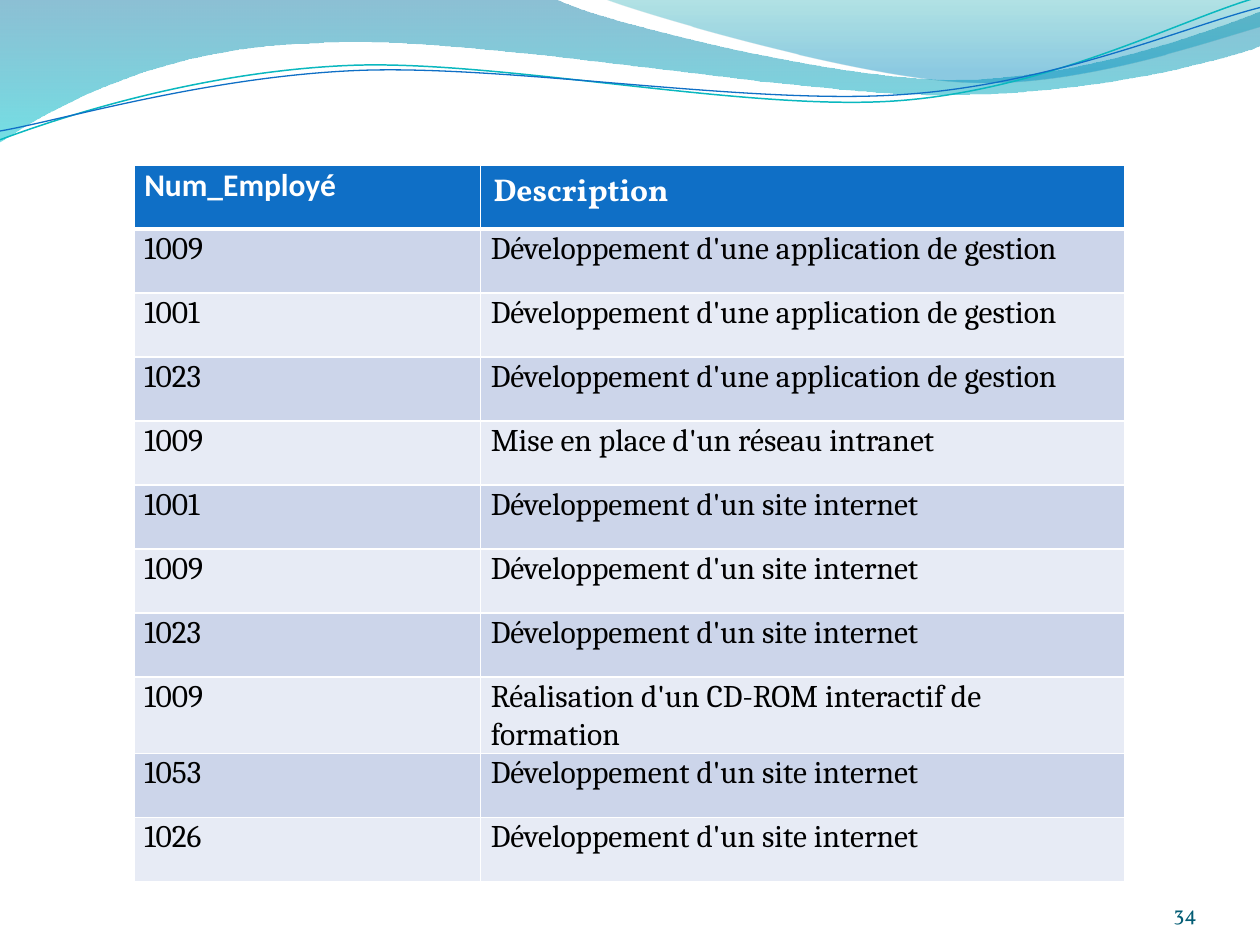
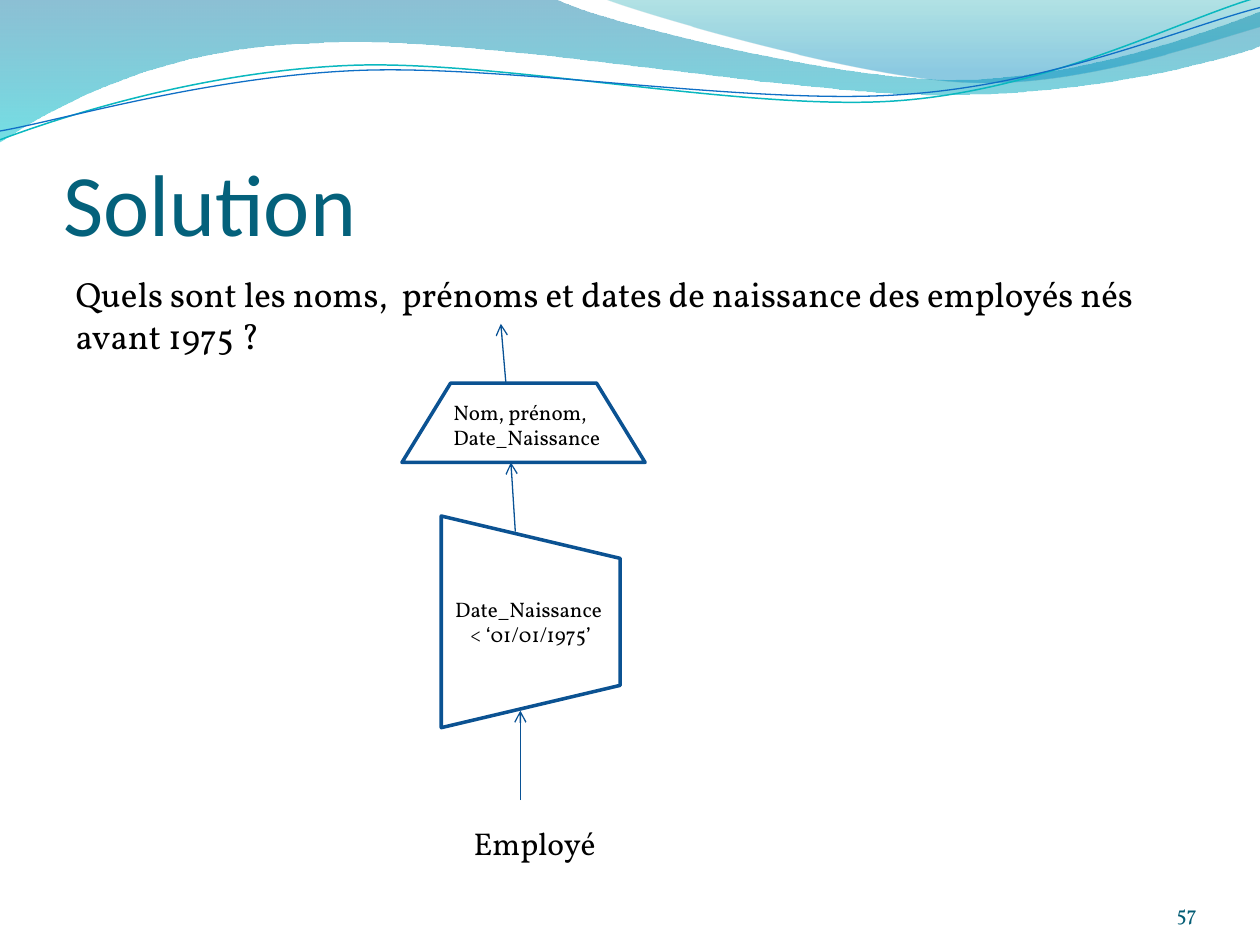
import dataclasses

import lxml.etree
import pptx
import pptx.dml.color
import pptx.enum.shapes
import pptx.enum.text
import pptx.oxml.ns
import pptx.util

COLUMNS, ROWS = 100, 75
WIDTH, HEIGHT = pptx.util.Inches(10), pptx.util.Inches(7.5)
ALIGN = pptx.enum.text.PP_ALIGN
ANCHOR = pptx.enum.text.MSO_ANCHOR
qn = pptx.oxml.ns.qn


@dataclasses.dataclass(frozen=True)
class Theme:
    heading_font: str = "Calibri"
    body_font: str = "Vollkorn"
    table_font: str = "Cambria"
    title: str = "04617B"
    number: str = "045D75"
    text: str = "000000"
    white: str = "FFFFFF"
    accent: str = "0F6FC6"
    teal: str = "0AB8BF"
    arrow: str = "095295"
    outline: str = "0B5292"
    bands: tuple = ("CCD5EA", "E7EBF5")
    title_size: int = 50
    question_size: int = 20
    text_size: int = 18
    small_size: int = 12


THEME = Theme()

# Curves: a start point, then cubic segments (two controls and an end), in grid cells.
UPPER_EDGE = [(44, -0.1), (47.6, 1.7), (66.4, 6.3), (75.8, 6.3),
              (85.3, 6.3), (95.8, 2.6), (100, 0.9)]
LOWER_EDGE = [(100.1, 3.6), (98.3, 4.4), (87, 7.6), (74.6, 7.5),
              (62.2, 7.5), (38.2, 2.8), (25.7, 3.4),
              (12.9, 3.6), (4.6, 8.3), (-0.1, 11.3)]
RIGHT_EDGE = [(47.9, -0.1), (50.9, 1.1), (68.2, 6.2), (76.9, 6.5),
              (85.6, 6.9), (96.1, 3.2), (100, 2.1)]
TEAL_LINE = [(0, 11.1), (4.8, 9.3), (15.8, 5.7), (27.7, 5.2),
             (39.5, 4.7), (59.3, 8.9), (71.3, 8),
             (83.3, 7.1), (93.8, 1.5), (99.8, -0.2)]
BLUE_LINE = [(0, 10.4), (4.7, 9.6), (16.4, 6.1), (28.3, 5.6),
             (40.3, 5.1), (59.7, 8.4), (71.7, 7.5),
             (83.6, 6.7), (94.1, 2.1), (100, 0.6)]

PROJECTS = [
    ("1009", "Développement d'une application de gestion"),
    ("1001", "Développement d'une application de gestion"),
    ("1023", "Développement d'une application de gestion"),
    ("1009", "Mise en place d'un réseau intranet"),
    ("1001", "Développement d'un site internet"),
    ("1009", "Développement d'un site internet"),
    ("1023", "Développement d'un site internet"),
    ("1009", "Réalisation d'un CD-ROM interactif de formation"),
    ("1053", "Développement d'un site internet"),
    ("1026", "Développement d'un site internet"),
]


def rgb(value):
    return pptx.dml.color.RGBColor.from_string(value)


def across(columns):
    return round(WIDTH * columns / COLUMNS)


def down(rows):
    return round(HEIGHT * rows / ROWS)


def area(left, top, width, height):
    return across(left), down(top), across(width), down(height)


def add_outline(page, curves, close):
    """Join curves by straight lines; a curve of one point is a corner."""
    corners = [(across(x), down(y)) for curve in curves for x, y in curve]
    builder = page.shapes.build_freeform(*corners[0])
    builder.add_line_segments(corners[1:], close=close)
    shape = builder.convert_to_shape()
    shape.shadow.inherit = False
    segments = iter(list(shape.element.spPr.iter(qn("a:lnTo"))))
    for order, curve in enumerate(curves):
        if order:
            next(segments)
        for _ in range(len(curve) // 3):
            bend_segments([next(segments) for _ in range(3)])
    return shape


def bend_segments(lines):
    """Turn three straight segments into one cubic curve."""
    bend = lxml.etree.Element(qn("a:cubicBezTo"))
    lines[0].addprevious(bend)
    for line in lines:
        bend.append(line[0])
        line.getparent().remove(line)


def add_wave(page, curves, stops):
    """Add a band with a vertical gradient; a stop is position, colour, opacity."""
    wave = add_outline(page, curves, True)
    wave.line.fill.background()
    wave.fill.gradient()
    wave.fill.gradient_angle = 270
    for stop, (position, color, opacity) in zip(wave.fill.gradient_stops, stops):
        stop.position = position
        stop.color.rgb = rgb(color)
    for color, (_, _, opacity) in zip(wave.element.spPr.iter(qn("a:srgbClr")), stops):
        lxml.etree.SubElement(color, qn("a:alpha"), val=str(opacity * 1000))
    return wave


def add_ripple(page, curve, color, width):
    ripple = add_outline(page, [curve], False)
    ripple.fill.background()
    ripple.line.color.rgb = rgb(color)
    ripple.line.width = pptx.util.Pt(width)
    return ripple


def move_waves_to_master(deck, page):
    """Build the header waves on a page, then hand them to the master."""
    waves = [
        add_wave(page, [[(0, 0)], UPPER_EDGE, LOWER_EDGE],
                 [(0, "0074A1", 45), (1, "00C6CF", 55)]),
        add_wave(page, [RIGHT_EDGE, [(100, 0)]],
                 [(0, "00A1A9", 30), (0.8, "008BBF", 45)]),
        add_ripple(page, TEAL_LINE, THEME.teal, 0.85),
        add_ripple(page, BLUE_LINE, THEME.accent, 0.75),
    ]
    for order, wave in enumerate(waves):
        wave.element.nvSpPr.cNvPr.set("id", str(100 + order))
        deck.slide_master.shapes.element.append(wave.element)


def write(frame, lines, size, font=THEME.body_font, color=THEME.text,
          bold=False, align=ALIGN.LEFT, anchor=ANCHOR.TOP, insets=(0.1, 0.05, 0.1, 0.05)):
    """Fill a text frame with one paragraph; its lines are split by breaks."""
    frame.word_wrap = True
    frame.auto_size = pptx.enum.text.MSO_AUTO_SIZE.NONE
    frame.vertical_anchor = anchor
    (frame.margin_left, frame.margin_top,
     frame.margin_right, frame.margin_bottom) = map(pptx.util.Inches, insets)
    para = frame.paragraphs[0]
    para.alignment = align
    para.space_before = pptx.util.Pt(0)
    for order, line in enumerate(lines):
        if order:
            para.add_line_break()
        span = para.add_run()
        span.text = line
        style_span(span, size, font, color, bold)
    return para


def style_span(span, size, font, color, bold=False):
    span.font.size = pptx.util.Pt(size)
    span.font.name = font
    span.font.color.rgb = rgb(color)
    span.font.bold = bold


def add_label(page, place, lines, size, **style):
    box = page.shapes.add_textbox(*area(*place))
    write(box.text_frame, lines, size, **style)


def add_page_number(page, number):
    add_label(page, (86.7, 69.5, 8.3, 4), [number], THEME.small_size, color=THEME.number,
              align=ALIGN.RIGHT, anchor=ANCHOR.BOTTOM, insets=(0, 0, 0, 0))


def fill_placeholder(box, place, lines, size, **style):
    box.left, box.top, box.width, box.height = area(*place)
    return write(box.text_frame, lines, size, **style)


def remove_bullet(para):
    properties = para._p.get_or_add_pPr()
    properties.set("marL", "0")
    properties.set("indent", "0")
    lxml.etree.SubElement(properties, qn("a:buNone"))


def add_borders(cell, bottom):
    properties = cell._tc.get_or_add_tcPr()
    for side, width in (("L", 1), ("R", 1), ("T", 1), ("B", bottom)):
        line = lxml.etree.SubElement(properties, qn("a:ln" + side),
                                     w=str(pptx.util.Pt(width)))
        solid = lxml.etree.SubElement(line, qn("a:solidFill"))
        lxml.etree.SubElement(solid, qn("a:srgbClr"), val=THEME.white)


def fill_cell(cell, text, fill, tight=True, bottom=1, **style):
    """Format one cell; a tight cell has no top inset and looser lines."""
    add_borders(cell, bottom)
    cell.fill.solid()
    cell.fill.fore_color.rgb = rgb(fill)
    para = cell.text_frame.paragraphs[0]
    if tight:
        cell.margin_left = cell.margin_right = pptx.util.Inches(0.08)
        cell.margin_top = cell.margin_bottom = 0
        para.line_spacing = 1.05
    span = para.add_run()
    span.text = text
    style_span(span, THEME.text_size, **style)


def add_project_table(page):
    count, row_height = len(PROJECTS) + 1, 5.08
    place = area(10.65, 13.1, 78.6, count * row_height)
    table = page.shapes.add_table(count, 2, *place).table
    for column, width in zip(table.columns, (27.5, 51.1)):
        column.width = across(width)
    head = dict(fill=THEME.accent, bottom=3, color=THEME.white, bold=True)
    fill_cell(table.cell(0, 0), "Num_Employé", font=THEME.heading_font, **head)
    fill_cell(table.cell(0, 1), "Description", tight=False, font=THEME.body_font, **head)
    for row, project in enumerate(PROJECTS, 1):
        for column, text in enumerate(project):
            fill_cell(table.cell(row, column), text, THEME.bands[(row - 1) % 2],
                      font=THEME.table_font, color=THEME.text)


def add_arrow(page, start, end):
    arrow = page.shapes.add_connector(
        pptx.enum.shapes.MSO_CONNECTOR.STRAIGHT,
        across(start[0]), down(start[1]), across(end[0]), down(end[1]))
    arrow.line.color.rgb = rgb(THEME.arrow)
    arrow.line.width = pptx.util.Pt(0.75)
    properties = arrow.element.spPr
    lxml.etree.SubElement(properties.find(qn("a:ln")), qn("a:tailEnd"), type="arrow")
    lxml.etree.SubElement(properties, qn("a:effectLst"))


def add_operator(page, place, rotation):
    """Add the trapezium that stands for an operation of relational algebra."""
    operator = page.shapes.add_shape(
        pptx.enum.shapes.MSO_SHAPE.FLOWCHART_MANUAL_OPERATION, *area(*place))
    operator.rotation = rotation
    operator.shadow.inherit = False
    operator.fill.solid()
    operator.fill.fore_color.rgb = rgb(THEME.white)
    operator.line.color.rgb = rgb(THEME.outline)
    operator.line.width = pptx.util.Pt(2)
    return operator


def add_query_tree(page):
    add_arrow(page, (41.3, 63.5), (41.3, 56.4))
    add_arrow(page, (40.9, 42.2), (40.55, 36.7))
    add_label(page, (36.6, 64.9, 14.2, 4.9), ["Employé"], THEME.text_size)
    selection = add_operator(page, (33.72, 42.25, 16.8, 14.2), 270)
    write(selection.text_frame, ["Date_Naissance ", "< ‘01/01/1975’"], THEME.small_size,
          align=ALIGN.CENTER, anchor=ANCHOR.MIDDLE)
    selection.element.txBody.find(qn("a:bodyPr")).set("vert", "vert")
    add_operator(page, (31.9, 30.4, 19.3, 6.3), 180)
    add_arrow(page, (40.15, 30.4), (39.75, 25.7))
    add_label(page, (35, 31.2, 14.2, 5), ["Nom, prénom,", "Date_Naissance"],
              THEME.small_size)


def main():
    deck = pptx.Presentation()
    deck.slide_width, deck.slide_height = WIDTH, HEIGHT

    page = deck.slides.add_slide(deck.slide_layouts[6])
    move_waves_to_master(deck, page)
    add_project_table(page)
    add_page_number(page, "34")

    page = deck.slides.add_slide(deck.slide_layouts[1])
    fill_placeholder(page.shapes.title, (5, 7.7, 90, 12.5), ["Solution"], THEME.title_size,
                     font=THEME.heading_font, color=THEME.title,
                     anchor=ANCHOR.BOTTOM, insets=(0, 0.05, 0, 0))
    question = ("Quels sont les noms,  prénoms et dates de naissance "
                "des employés nés avant 1975 ?")
    remove_bullet(fill_placeholder(page.placeholders[1], (5, 21.15, 90, 5.3), [question],
                                   THEME.question_size))
    add_query_tree(page)
    add_page_number(page, "57")

    deck.save("out.pptx")


if __name__ == "__main__":
    main()
